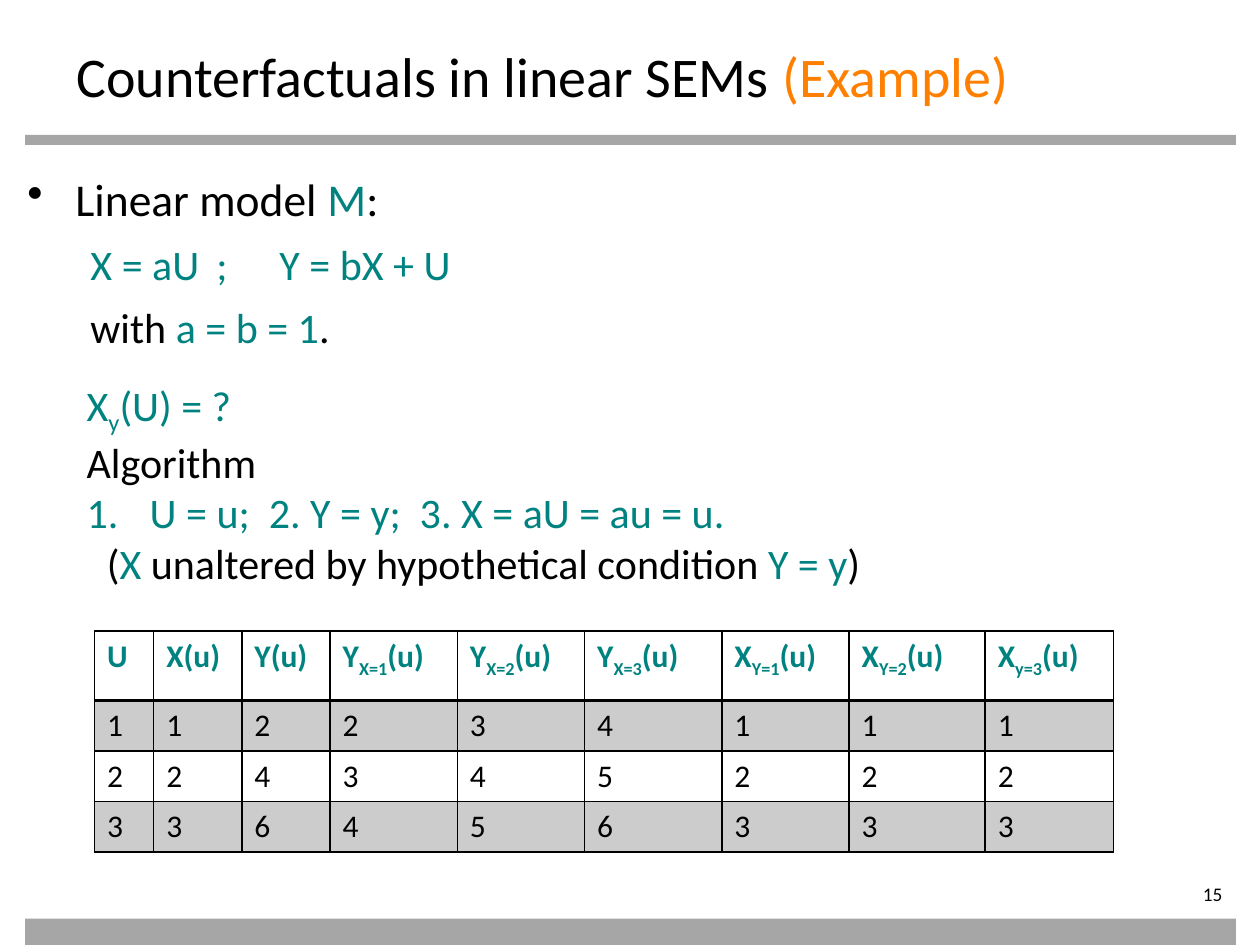
from lxml import etree
from pptx import Presentation, util as u
from pptx.dml.color import RGBColor
from pptx.enum import shapes, text
from pptx.oxml import parse_xml
from pptx.oxml.ns import nsdecls, qn

hues = {"ink": "000000", "teal": "008380", "gold": "FF8000", "bar": "A6A6A6"}
hue = {name: RGBColor.from_string(code) for name, code in hues.items()}

deck = Presentation()
deck.slide_width, deck.slide_height = u.Inches(10), u.Inches(7.5)
cell_w, cell_h = deck.slide_width / 100, deck.slide_height / 75
slide = deck.slides.add_slide(deck.slide_layouts[6])


def grid(left, top, wide, high):
    return [int(n) for n in (left * cell_w, top * cell_h, wide * cell_w, high * cell_h)]


def write(para, size, runs, bold=False):
    para.font.name, para.font.size, para.font.bold = "Calibri", u.Pt(size), bold
    tones = {tone for _, tone, *_ in runs}
    if len(tones) == 1:
        para.font.color.rgb = hue[runs[0][1]]
    for words, tone, *sub in runs:
        run = para.add_run()
        run.text = words
        if len(tones) > 1:
            run.font.color.rgb = hue[tone]
        if sub:
            run.font._element.set("baseline", "-25000")


for top, high in ((10.7, 0.8), (72.9, 2.1)):
    bar = slide.shapes.add_shape(shapes.MSO_SHAPE.RECTANGLE, *grid(2, top, 96.1, high))
    bar.shadow.inherit = False
    bar.fill.solid()
    bar.fill.fore_color.rgb = hue["bar"]
    bar.line.fill.background()

bullet = '<a:buChar {} char="•"/>'
number = '<a:buAutoNum {} type="arabicPeriod"/>'
tabs = '<a:tabLst {}>' + "".join(
    f'<a:tab pos="{int(stop * cell_w)}" algn="l"/>' for stop in (15.5, 29.5, 34.1)) + "</a:tabLst>"

boxes = [
    ((5.1, 2.8, 90, 5.5), 0, [
        (32, 0, 0, "", [("Counterfactuals in linear SEMs ", "ink"), ("(Example)", "gold")])]),
    ((1.2, 13.1, 97.6, 15.7), 7.2, [
        (26, 3.8, -3.8, bullet, [("Linear model ", "ink"), ("M", "teal"), (":", "ink")]),
        (24, 0, 0, tabs, [("\tX = aU\t;\tY = bX + U", "teal")]),
        (24, 5, 0, "", [("with ", "ink"), ("a = b = 1", "teal"), (".", "ink")])]),
    ((5.9, 29.6, 87.4, 17.2), 0, [
        (24, 0, 0, "", [("X", "teal"), ("y", "teal", True), ("(U) = ?", "teal")]),
        (24, 0, 0, "", [("Algorithm", "ink")]),
        (24, 5, -5, number, [("U = u;  2. Y = y;  3. X = aU = au = u.", "teal")]),
        (24, 1.6, 0, "", [("(", "ink"), ("X", "teal"),
                          (" unaltered by hypothetical condition ", "ink"),
                          ("Y = y", "teal"), (")", "ink")])]),
]
for place, gap, lines in boxes:
    frame = slide.shapes.add_textbox(*grid(*place)).text_frame
    frame.word_wrap = True
    for i, (size, left, first, mark, runs) in enumerate(lines):
        para = frame.add_paragraph() if i else frame.paragraphs[0]
        props = para._p.get_or_add_pPr()
        props.set("marL", str(int(left * cell_w)))
        props.set("indent", str(int(first * cell_w)))
        para.space_before = u.Pt(gap if i else 0)
        if mark:
            props.append(parse_xml(mark.format(nsdecls("a"))))
        write(para, size, runs)

frame = slide.shapes.add_textbox(*grid(87, 70, 11, 2.2)).text_frame
frame.word_wrap = True
frame.margin_left = frame.margin_top = frame.margin_bottom = 0
frame.paragraphs[0].alignment = text.PP_ALIGN.RIGHT
write(frame.paragraphs[0], 11, [("15", "ink")])

heads = [("U",), ("X(u)",), ("Y(u)",)] + [
    (base, sub, "(u)") for base, sub in
    (("Y", "X=1"), ("Y", "X=2"), ("Y", "X=3"), ("X", "Y=1"), ("X", "Y=2"), ("X", "y=3"))]
data = [[n, n, 2 * n, n + 1, n + 2, n + 3, n, n, n] for n in (1, 2, 3)]
wides = [4.7, 7, 7, 10.1, 10.1, 10.9, 10.1, 10.8, 10.2]
highs = [5.5, 4, 4, 4]
table = slide.shapes.add_table(4, 9, *grid(7.5, 50.1, sum(wides), sum(highs))).table
for col, wide in zip(table.columns, wides):
    col.width = int(wide * cell_w)
for row, high in zip(table.rows, highs):
    row.height = int(high * cell_h)

for r, row in enumerate([heads] + data):
    for c, value in enumerate(row):
        cell = table.cell(r, c)
        para = cell.text_frame.paragraphs[0]
        if r:
            write(para, 18, [(str(value), "ink")])
        else:
            write(para, 18, [(part, "teal", True) if i == 1 else (part, "teal")
                             for i, part in enumerate(value)], bold=True)
        if r % 2:
            cell.fill.solid()
            cell.fill.fore_color.rgb = hue["ink"]
            tone = cell._tc.tcPr.find(".//" + qn("a:srgbClr"))
            etree.SubElement(tone, qn("a:alpha"), val="20000")
        else:
            cell.fill.background()
        for i, side in enumerate("LRTB"):
            thick = 2 if (r, side) in ((0, "B"), (1, "T")) else 1
            cell._tc.tcPr.insert(i, parse_xml(
                f'<a:ln{side} {nsdecls("a")} w="{u.Pt(thick)}"><a:solidFill>'
                f'<a:srgbClr val="{hues["ink"]}"/></a:solidFill></a:ln{side}>'))

deck.save("out.pptx")
